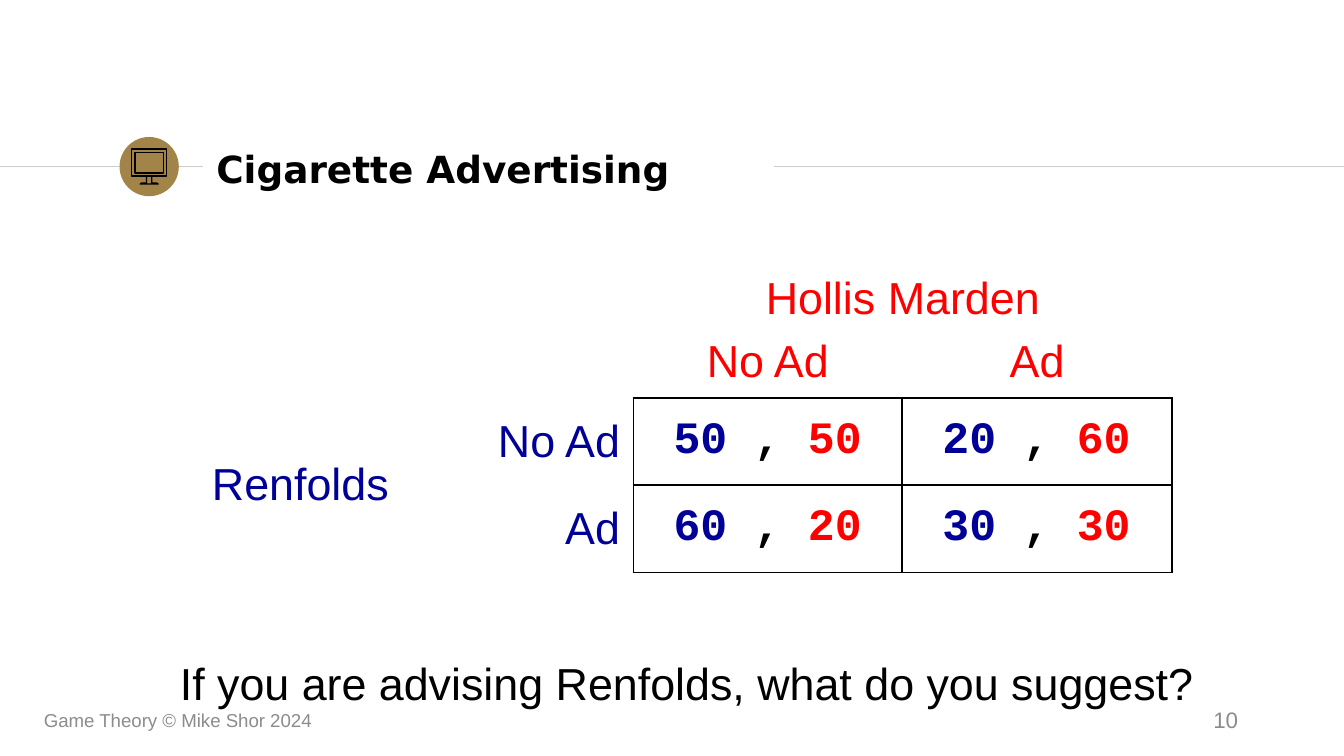
from lxml.etree import SubElement as Sub
from pptx import Presentation
from pptx.dml.color import RGBColor as Rgb
from pptx.enum.shapes import MSO_CONNECTOR as Link, MSO_SHAPE as Kind
from pptx.enum.text import MSO_ANCHOR as Anchor, PP_ALIGN as Align
from pptx.oxml.ns import qn
from pptx.util import Cm, Pt

HUES = {"ink": "000000", "rule": "CCCCCC", "gold": "A28448",
        "red": "FF0000", "blue": "000099", "gray": "8C8C8C"}
FORMS = {
    "title": {"name": "DejaVu Sans", "size": Pt(20), "bold": True},
    "label": {"name": "Arial", "size": Pt(24), "bold": False},
    "score": {"name": "Courier New", "size": Pt(24), "bold": True},
    "note": {"name": "Arial", "size": Pt(10), "bold": False},
    "page": {"name": "Arial", "size": Pt(12), "bold": False},
}


def tint(hue):
    """Return the named colour."""
    return Rgb.from_string(HUES[hue])


def write(frame, parts, form, align=Align.LEFT):
    """Write (text, hue) parts as one paragraph."""
    para = frame.paragraphs[0]
    para.alignment = align
    for text, hue in parts:
        run = para.add_run()
        run.text = text
        for key, value in FORMS[form].items():
            setattr(run.font, key, value)
        run.font.color.rgb = tint(hue)


def add_text(slide, box, text, hue, form, align=Align.LEFT, inset=0.13):
    """Place one line of text, centred in height, in the box."""
    frame = slide.shapes.add_textbox(*map(Cm, box)).text_frame
    frame.word_wrap = True
    frame.vertical_anchor = Anchor.MIDDLE
    frame.margin_top = frame.margin_bottom = Cm(inset)
    write(frame, [(text, hue)], form, align)


def add_rule(slide, left, right, y):
    """Draw a level grey line."""
    rule = slide.shapes.add_connector(Link.STRAIGHT, Cm(left), Cm(y), Cm(right), Cm(y))
    rule.line.color.rgb = tint("rule")
    rule.line.width = Pt(0.75)
    Sub(rule._element.spPr, qn("a:effectLst"))


def outline(shape):
    """Leave only a thin black line on the shape."""
    shape.shadow.inherit = False
    shape.fill.background()
    shape.line.color.rgb = tint("ink")
    shape.line.width = Pt(0.75)


def add_icon(slide, box):
    """Draw a screen on a gold disc."""
    x, y, size, _ = box
    disc = slide.shapes.add_shape(Kind.OVAL, *map(Cm, box))
    disc.shadow.inherit = False
    disc.fill.solid()
    disc.fill.fore_color.rgb = tint("gold")
    disc.line.fill.background()
    wide = 0.66
    screen = slide.shapes.add_shape(
        Kind.FRAME, Cm(x + (size - wide) / 2), Cm(y + 0.23), Cm(wide), Cm(0.51))
    screen.adjustments[0] = 0.12
    outline(screen)
    half = [(0.05, 0.76), (0.05, 0.87), (0.14, 0.87), (0.17, 0.89)]
    mid = x + size / 2
    points = [(mid - dx, y + dy) for dx, dy in half]
    points += [(mid + dx, y + dy) for dx, dy in reversed(half)]
    points = [(Cm(px), Cm(py)) for px, py in points]
    pen = slide.shapes.build_freeform(*points[0])
    pen.add_line_segments(points[1:], close=False)
    outline(pen.convert_to_shape())


def add_head(slide, box, text):
    """Place the title between two rules, with its icon."""
    x, y, wide, high = box
    mid = y + high / 2 - 0.03
    add_rule(slide, 0, x, mid)
    add_rule(slide, x + wide, 25.4, mid)
    add_icon(slide, (x - 1.58, mid - 0.56, 1.12, 1.12))
    add_text(slide, box, text, "ink", "title", inset=0.25)


def edge(cell, sides):
    """Draw black borders on the given sides, in the order LRTB."""
    props = cell._tc.get_or_add_tcPr()
    for side in sides:
        line = Sub(props, qn("a:ln" + side), w=str(Pt(1)))
        fill = Sub(line, qn("a:solidFill"))
        Sub(fill, qn("a:srgbClr"), val=HUES["ink"])


def add_game(slide, box, names, moves, scores):
    """Build the payoff table of a two-player game."""
    table = slide.shapes.add_table(4, 4, *map(Cm, box)).table
    table.first_row = table.horz_banding = False
    for col, wide in zip(table.columns, (7.14, 4.37, 5.08, 5.1)):
        col.width = Cm(wide)
    for row, high in zip(table.rows, (1.6, 1.27, 1.65, 1.65)):
        row.height = Cm(high)
    table.cell(0, 2).merge(table.cell(0, 3))
    table.cell(2, 0).merge(table.cell(3, 0))

    def label(row, col, text, hue, align, anchor):
        cell = table.cell(row, col)
        cell.vertical_anchor = anchor
        write(cell.text_frame, [(text, hue)], "label", align)
        return cell

    label(2, 0, names[0], "blue", Align.RIGHT, Anchor.MIDDLE)
    label(0, 2, names[1], "red", Align.CENTER, Anchor.BOTTOM)
    for i, move in enumerate(moves, 2):
        edge(label(1, i, move, "red", Align.CENTER, Anchor.TOP), "B")
        edge(label(i, 1, move, "blue", Align.RIGHT, Anchor.MIDDLE), "R")
    for r, line in enumerate(scores, 2):
        for c, (ours, theirs) in enumerate(line, 2):
            cell = table.cell(r, c)
            cell.vertical_anchor = Anchor.MIDDLE
            cell.margin_left = Cm(0.76)
            write(cell.text_frame, [(str(ours), "blue"), (" , ", "ink"),
                                    (str(theirs), "red")], "score")
            edge(cell, "LRTB")
    for cell in table.iter_cells():
        cell.fill.background()


def add_foot(slide, box, text, page):
    """Place the credit on the left and the page number on the right."""
    x, y, wide, high = box
    add_text(slide, (x, y, 8.59, high), text, "gray", "note")
    add_text(slide, (x + wide - 5.72, y, 5.72, high), page, "gray", "page", Align.RIGHT)


def main():
    """Build and save the slide."""
    deck = Presentation()
    deck.slide_width, deck.slide_height = Cm(25.4), Cm(14.29)
    slide = deck.slides.add_slide(deck.slide_layouts[6])
    add_head(slide, (3.84, 2.57, 10.79, 1.22), "Cigarette Advertising")
    add_game(slide, (0.46, 4.65, 21.69, 6.17), ("Renfolds", "Hollis Marden"),
             ("No Ad", "Ad"), [[(50, 50), (20, 60)], [(60, 20), (30, 30)]])
    add_text(slide, (3.15, 12.16, 20.52, 1.48),
             "If you are advising Renfolds, what do you suggest?", "ink", "label")
    add_foot(slide, (0.58, 13.23, 23.07, 0.76), "Game Theory © Mike Shor 2024", "10")
    deck.save("out.pptx")


if __name__ == "__main__":
    main()
